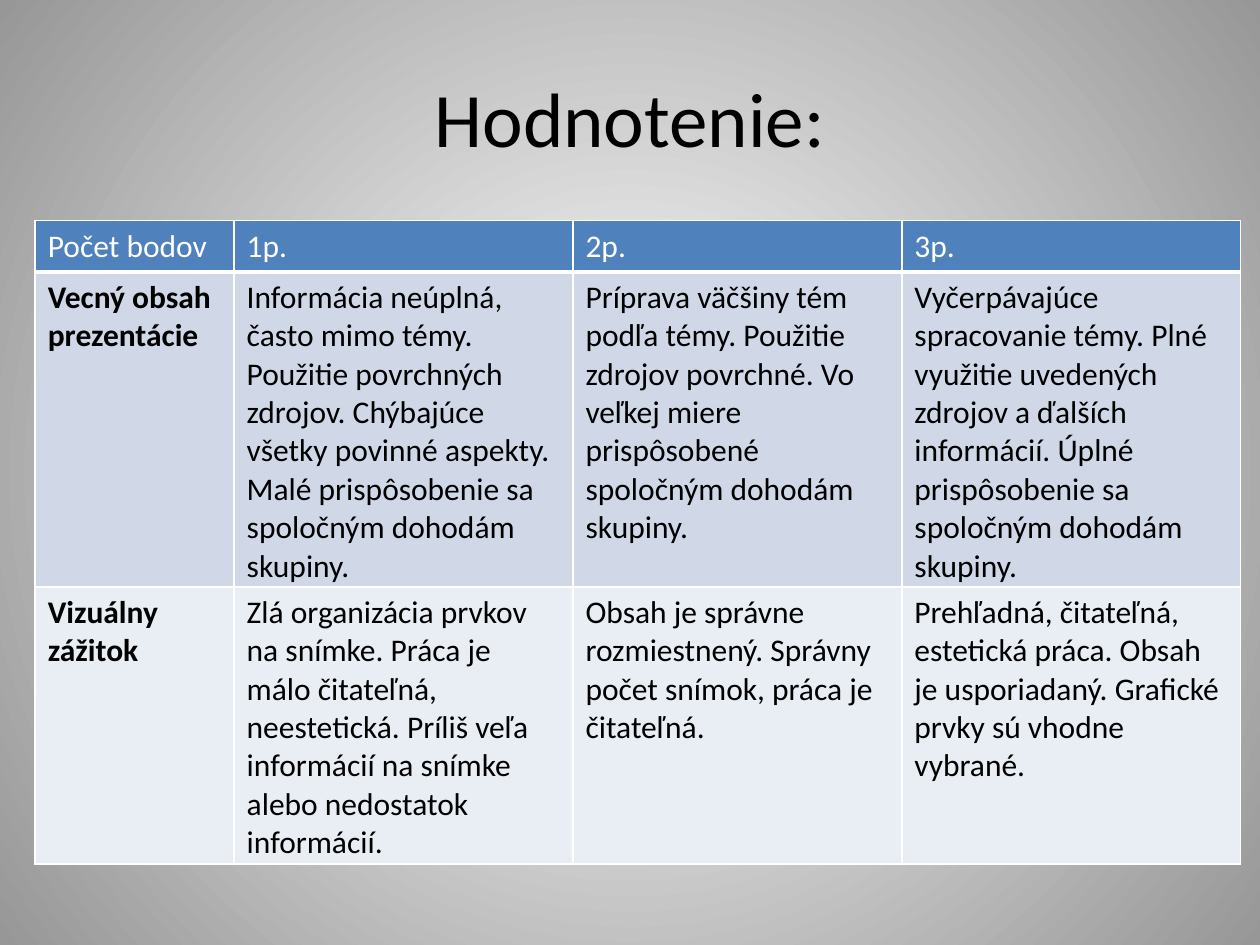
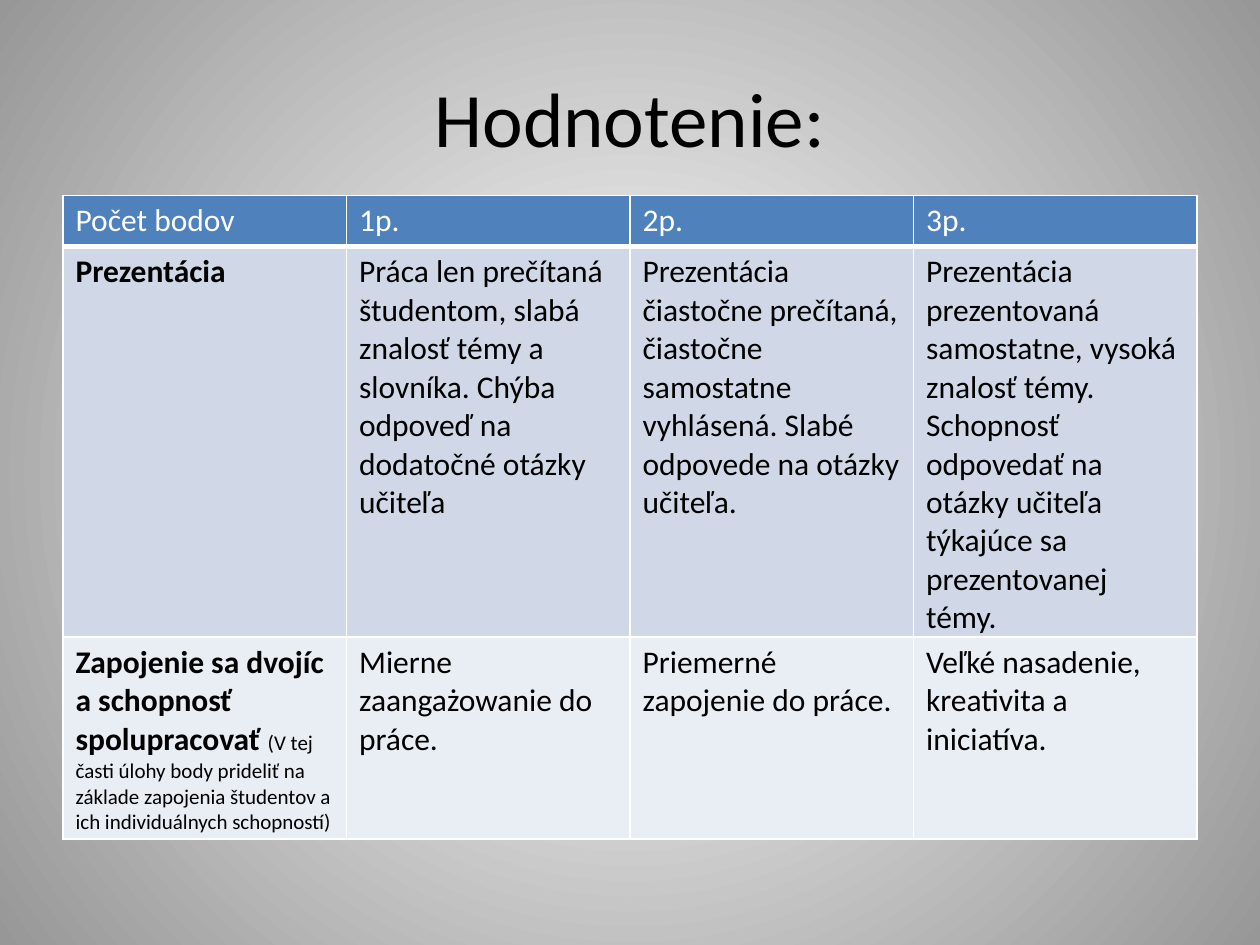
from dataclasses import dataclass

from lxml.etree import SubElement
from pptx import Presentation
from pptx.dml.color import RGBColor
from pptx.enum.text import MSO_ANCHOR, PP_ALIGN
from pptx.oxml.ns import qn
from pptx.util import Cm, Pt


@dataclass(frozen=True)
class Theme:
    font: str = "Calibri"
    ink: str = "000000"
    light: str = "FFFFFF"
    edge: str = "979797"
    head: str = "4F81BD"
    bands: tuple = ("D0D8E8", "E9EDF4")
    title: int = 44
    body: int = 18
    note: int = 12
    thin: int = 1
    thick: int = 3


THEME = Theme()
TITLE = (1.27, 0.76, 22.86, 3.18)
HEAD = ["Počet bodov", "1p.", "2p.", "3p."]
ROW = 1.03

PAGES = [
    {
        "box": (0.71, 4.45, 24.3, 12.98),
        "cols": (4.01, 6.83, 6.63, 6.83),
        "rows": [
            [
                "Vecný obsah prezentácie",
                "Informácia neúplná, často mimo témy. Použitie povrchných zdrojov. "
                "Chýbajúce všetky povinné aspekty. Malé prispôsobenie sa spoločným "
                "dohodám skupiny.",
                "Príprava väčšiny tém podľa témy. Použitie zdrojov povrchné. "
                "Vo veľkej miere prispôsobené spoločným dohodám skupiny.",
                "Vyčerpávajúce spracovanie témy. Plné využitie uvedených zdrojov "
                "a ďalších informácií. Úplné prispôsobenie sa spoločným dohodám "
                "skupiny.",
            ],
            [
                "Vizuálny zážitok",
                "Zlá organizácia prvkov na snímke. Práca je málo čitateľná, "
                "neestetická. Príliš veľa informácií na snímke alebo nedostatok "
                "informácií.",
                "Obsah je správne rozmiestnený. Správny počet snímok, práca je "
                "čitateľná.",
                "Prehľadná, čitateľná, estetická práca. Obsah je usporiadaný. "
                "Grafické prvky sú vhodne vybrané.",
            ],
        ],
    },
    {
        "box": (1.27, 3.94, 22.86, 12.98),
        "cols": (5.715,) * 4,
        "rows": [
            [
                "Prezentácia",
                "Práca len prečítaná študentom, slabá znalosť témy a slovníka. "
                "Chýba odpoveď na dodatočné otázky učiteľa",
                "Prezentácia čiastočne prečítaná, čiastočne samostatne vyhlásená. "
                "Slabé odpovede na otázky učiteľa.",
                "Prezentácia prezentovaná samostatne, vysoká znalosť témy. "
                "Schopnosť odpovedať na otázky učiteľa týkajúce sa prezentovanej "
                "témy.",
            ],
            [
                "Zapojenie sa dvojíc a schopnosť spolupracovať ",
                "Mierne zaangażowanie do práce.",
                "Priemerné zapojenie do práce.",
                "Veľké nasadenie, kreativita a iniciatíva.",
            ],
        ],
        "note": "(V tej časti úlohy body prideliť na základe zapojenia študentov "
                "a ich individuálnych schopností)",
    },
]


def write(frame, text, size=THEME.body, color=THEME.ink, bold=False, align=None):
    para = frame.paragraphs[0]
    if align is not None:
        para.alignment = align
    run = para.add_run()
    run.text = text
    font = run.font
    font.name, font.size, font.bold = THEME.font, Pt(size), bold
    font.color.rgb = RGBColor.from_string(color)


def shade(master):
    fill = master.background.fill
    fill.gradient()
    for stop, color in zip(fill.gradient_stops, (THEME.light, THEME.edge)):
        stop.color.rgb = RGBColor.from_string(color)
    grad = next(master.element.iter(qn("a:gradFill")))
    grad.remove(grad.find(qn("a:lin")))
    ring = SubElement(grad, qn("a:path"), {"path": "circle"})
    SubElement(ring, qn("a:fillToRect"), dict.fromkeys("ltrb", "50000"))


def border(cell, base):
    props = cell._tc.get_or_add_tcPr()
    for side, width in zip("LRTB", (THEME.thin,) * 3 + (base,)):
        line = SubElement(props, qn(f"a:ln{side}"), {"w": str(Pt(width))})
        solid = SubElement(line, qn("a:solidFill"))
        SubElement(solid, qn("a:srgbClr"), {"val": THEME.light})


def add_title(slide, box, text):
    frame = slide.shapes.add_textbox(*map(Cm, box)).text_frame
    frame.word_wrap = True
    frame.vertical_anchor = MSO_ANCHOR.MIDDLE
    write(frame, text, size=THEME.title, align=PP_ALIGN.CENTER)


def add_grid(slide, box, cols, rows, note=None):
    left, top, width, height = map(Cm, box)
    data = [HEAD] + rows
    holder = slide.shapes.add_table(
        len(data), len(cols), left, top, width, Cm(ROW * len(data)))
    grid = holder.table
    grid.first_row = grid.horz_banding = False
    for col, size in zip(grid.columns, cols):
        col.width = Cm(size)
    holder.height = height
    for r, (texts, color) in enumerate(zip(data, (THEME.head, *THEME.bands))):
        top_row = r == 0
        for c, text in enumerate(texts):
            cell = grid.cell(r, c)
            border(cell, THEME.thick if top_row else THEME.thin)
            cell.fill.solid()
            cell.fill.fore_color.rgb = RGBColor.from_string(color)
            write(cell.text_frame, text, bold=c == 0 and not top_row,
                  color=THEME.light if top_row else THEME.ink)
    if note:
        write(grid.cell(len(rows), 0).text_frame, note, size=THEME.note)


def main():
    deck = Presentation()
    deck.slide_width, deck.slide_height = Cm(25.4), Cm(19.05)
    shade(deck.slide_master)
    for page in PAGES:
        slide = deck.slides.add_slide(deck.slide_layouts[6])
        add_title(slide, TITLE, "Hodnotenie:")
        add_grid(slide, **page)
    deck.save("out.pptx")


if __name__ == "__main__":
    main()
